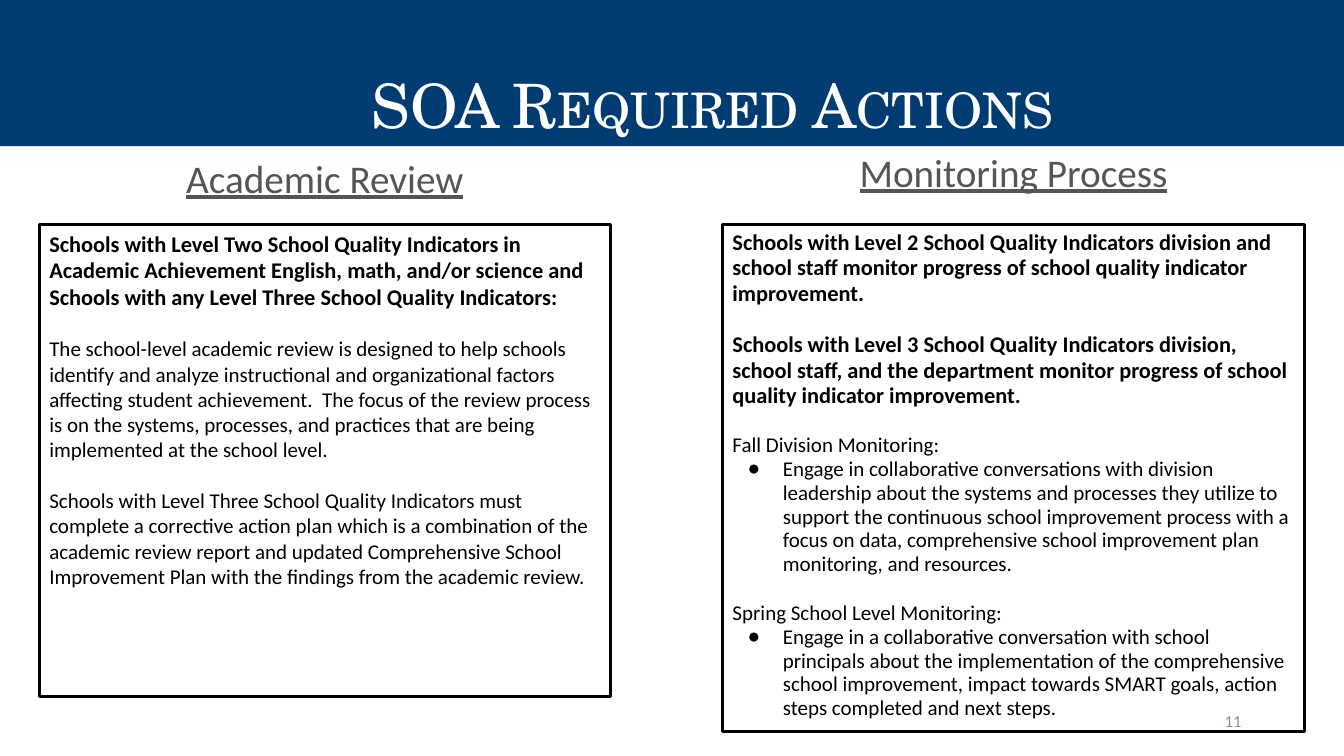
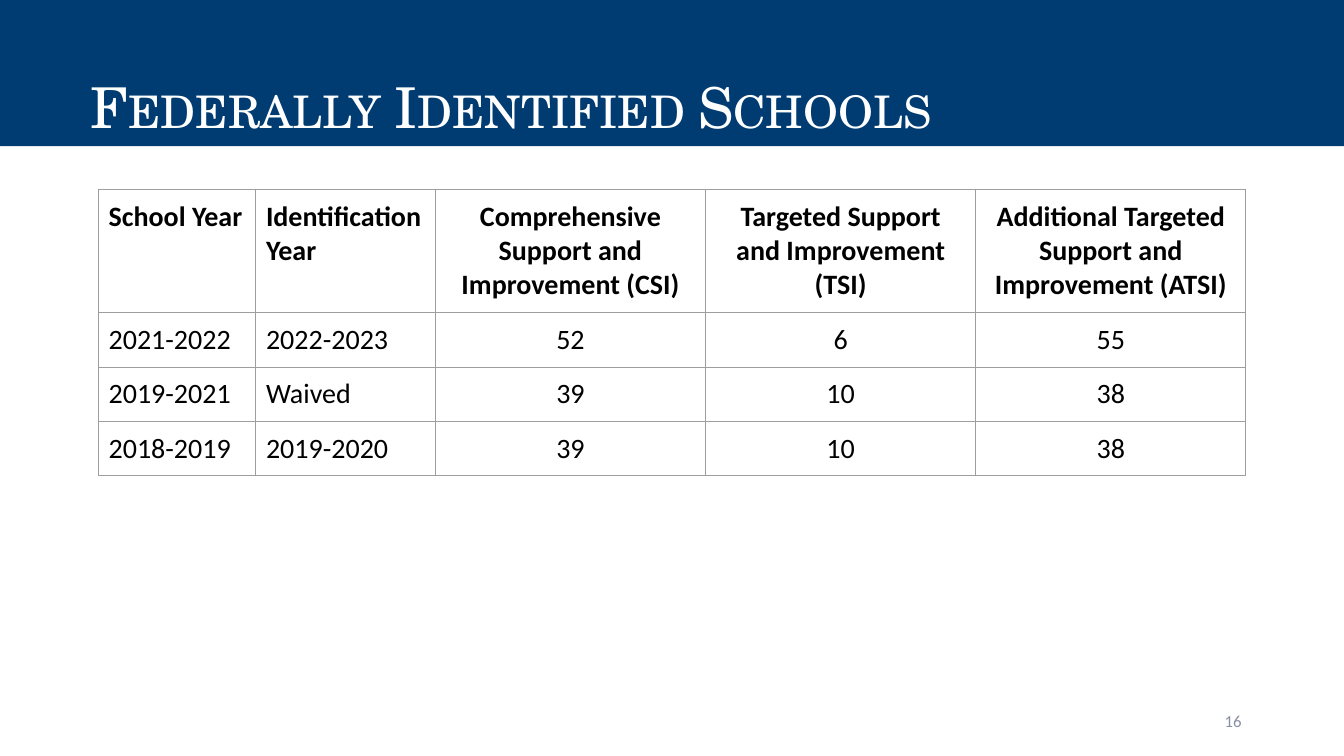
import pptx
import pptx.util
import pptx.dml.color
import pptx.enum.text
import pptx.oxml
import pptx.oxml.ns
import lxml.etree

Pt = pptx.util.Pt
RGB = pptx.dml.color.RGBColor
ALIGN = pptx.enum.text.PP_ALIGN
ANCHOR = pptx.enum.text.MSO_ANCHOR
qn = pptx.oxml.ns.qn

# Colours and fonts
NAVY = RGB(0x00, 0x3C, 0x71)
WHITE = RGB(0xFF, 0xFF, 0xFF)
BLACK = RGB(0x00, 0x00, 0x00)
HEADING_GRAY = RGB(0x55, 0x55, 0x55)
NUMBER_GRAY = RGB(0x88, 0x8F, 0xA3)
GRID_GRAY = RGB(0x9E, 0x9E, 0x9E)
SERIF = "TeX Gyre Schola"
SANS = "Calibri"

# Text formats
TITLE = dict(name=SERIF, color=WHITE, bold=False)
HEADING = dict(name=SANS, size=Pt(28), color=HEADING_GRAY, bold=False, underline=True)
NUMBER = dict(name=SANS, size=Pt(12), color=NUMBER_GRAY)
LEAD = dict(name=SANS, size=Pt(16), color=BLACK, bold=True)
TEXT = dict(LEAD, size=Pt(15), bold=False)
HEAD_CELL = dict(LEAD, size=Pt(20))
CELL = dict(HEAD_CELL, bold=False)

SLIDE_W, SLIDE_H = 960, 540
BAND_H = 104.4
COMPARISON, TITLE_ONLY = 4, 5


class Deck:
    """Holds the shared style and the current slide."""

    def __init__(self):
        self.prs = pptx.Presentation()
        self.prs.slide_width, self.prs.slide_height = Pt(SLIDE_W), Pt(SLIDE_H)
        self.slide = None

    def new_slide(self, layout, title, size, number, align=ALIGN.LEFT, spacing=1.0):
        self.slide = self.prs.slides.add_slide(self.prs.slide_layouts[layout])
        # Title band
        sp = self.slide.shapes.title
        self.place(sp, (0, 0, SLIDE_W, BAND_H), ANCHOR.BOTTOM)
        sp.text_frame.margin_left = Pt(64.8)
        sp.fill.solid()
        sp.fill.fore_color.rgb = NAVY
        r = self.add_text(sp.text_frame.paragraphs[0], title, dict(TITLE, size=Pt(size)),
                          alignment=align, line_spacing=spacing)
        r._r.get_or_add_rPr().set("cap", "small")
        # Slide number
        sp = self.slide.shapes.add_textbox(0, 0, 0, 0)
        self.place(sp, (678, 500.4, 216, 28.8), ANCHOR.MIDDLE)
        self.add_text(sp.text_frame.paragraphs[0], number, NUMBER, alignment=ALIGN.RIGHT)

    def place(self, sp, box, anchor):
        for name, value in zip(("left", "top", "width", "height"), box):
            setattr(sp, name, Pt(value))
        tf = sp.text_frame
        tf.word_wrap = True
        tf.auto_size = pptx.enum.text.MSO_AUTO_SIZE.NONE
        tf.vertical_anchor = anchor

    def add_text(self, p, text, font, **layout):
        for name, value in layout.items():
            setattr(p, name, value)
        r = p.add_run()
        r.text = text
        for name, value in font.items():
            if name == "color":
                r.font.color.rgb = value
            else:
                setattr(r.font, name, value)
        return r

    def bullet(self, p, char=None):
        pPr = p._p.get_or_add_pPr()
        left, indent = (36, -25.2) if char else (0, 0)
        pPr.set("marL", str(Pt(left)))
        pPr.set("indent", str(Pt(indent)))
        if char:
            clr = lxml.etree.SubElement(pPr, qn("a:buClr"))
            lxml.etree.SubElement(clr, qn("a:srgbClr"), val=str(BLACK))
            lxml.etree.SubElement(pPr, qn("a:buChar"), char=char)
        else:
            lxml.etree.SubElement(pPr, qn("a:buNone"))

    def heading(self, idx, box, text):
        sp = self.slide.placeholders[idx]
        self.place(sp, box, ANCHOR.TOP)
        p = sp.text_frame.paragraphs[0]
        self.add_text(p, text, HEADING, alignment=ALIGN.CENTER,
                      line_spacing=0.8, space_before=Pt(10))
        self.bullet(p)

    def panel(self, idx, box, items, spacing):
        """Outlined list; each item is (text, font, space before, bullet)."""
        sp = self.slide.placeholders[idx]
        self.place(sp, box, ANCHOR.TOP)
        sp.line.color.rgb = BLACK
        sp.line.width = Pt(2.25)
        tf = sp.text_frame
        for i, (text, font, before, char) in enumerate(items):
            p = tf.add_paragraph() if i else tf.paragraphs[0]
            self.add_text(p, text, font, alignment=ALIGN.LEFT,
                          line_spacing=spacing, space_before=Pt(before))
            self.bullet(p, char)

    def table(self, left, top, widths, heights, rows):
        shape = self.slide.shapes.add_table(len(rows), len(widths), Pt(left), Pt(top),
                                            Pt(sum(widths)), Pt(sum(heights)))
        tbl = shape.table
        tbl.first_row = tbl.horz_banding = False
        for col, width in zip(tbl.columns, widths):
            col.width = Pt(width)
        for i, (row, height) in enumerate(zip(rows, heights)):
            tbl.rows[i].height = Pt(height)
            for j, text in enumerate(row):
                self.cell(tbl.cell(i, j), text, CELL if i else HEAD_CELL,
                          ALIGN.LEFT if j < 2 else ALIGN.CENTER)

    def cell(self, cell, text, font, align):
        for side in ("left", "top", "right", "bottom"):
            setattr(cell, "margin_" + side, Pt(7.2))
        self.add_text(cell.text_frame.paragraphs[0], text, font, alignment=align)
        # Borders come before the fill in the cell properties
        tcPr = cell._tc.get_or_add_tcPr()
        for tag in ("a:lnL", "a:lnR", "a:lnT", "a:lnB"):
            ln = lxml.etree.SubElement(tcPr, qn(tag), w=str(Pt(0.75)))
            fill = lxml.etree.SubElement(ln, qn("a:solidFill"))
            lxml.etree.SubElement(fill, qn("a:srgbClr"), val=str(GRID_GRAY))
        cell.fill.background()


def main():
    deck = Deck()

    # Required actions: two headed panels
    deck.new_slide(COMPARISON, "SOA Required Actions", 43.7, "11", ALIGN.CENTER)
    deck.heading(1, (28, 113, 408, 47.5), "Academic Review")
    deck.panel(2, (28, 160.5, 408, 337), [
        ("Schools with Level Two School Quality Indicators in Academic Achievement "
         "English, math, and/or science and Schools with any Level Three School "
         "Quality Indicators:", LEAD, 0, None),
        ("The school-level academic review is designed to help schools identify and "
         "analyze instructional and organizational factors affecting student "
         "achievement.  The focus of the review process is on the systems, processes, "
         "and practices that are being implemented at the school level.",
         TEXT, 18.3, None),
        ("Schools with Level Three School Quality Indicators must complete a "
         "corrective action plan which is a combination of the academic review report "
         "and updated Comprehensive School Improvement Plan with the findings from "
         "the academic review.", TEXT, 18.3, None),
    ], 1.0)
    deck.heading(3, (521, 108.7, 406, 47.5), "Monitoring Process")
    deck.panel(4, (516, 160.5, 416, 362), [
        ("Schools with Level 2 School Quality Indicators division and school staff "
         "monitor progress of school quality indicator improvement.", LEAD, 0, None),
        ("Schools with Level 3 School Quality Indicators division, school staff, and "
         "the department monitor progress of school quality indicator improvement.",
         LEAD, 18.5, None),
        ("Fall Division Monitoring:", TEXT, 17.4, None),
        ("Engage in collaborative conversations with division leadership about the "
         "systems and processes they utilize to support the continuous school "
         "improvement process with a focus on data, comprehensive school improvement "
         "plan monitoring, and resources.", TEXT, 0, "●"),
        ("Spring School Level Monitoring:", TEXT, 17.4, None),
        ("Engage in a collaborative conversation with school principals about the "
         "implementation of the comprehensive school improvement, impact towards "
         "SMART goals, action steps completed and next steps.", TEXT, 0, "●"),
    ], 0.95)

    # Identified schools: table by year
    deck.new_slide(TITLE_ONLY, "Federally Identified Schools", 40.2, "16", spacing=0.9)
    deck.table(70.4, 135.3, [112.4, 128.2] + [193] * 3, [87.8] + [38.8] * 3, [
        ("School Year", "Identification Year",
         "Comprehensive Support and Improvement (CSI)",
         "Targeted Support and Improvement (TSI)",
         "Additional Targeted Support and Improvement (ATSI)"),
        ("2021-2022", "2022-2023", "52", "6", "55"),
        ("2019-2021", "Waived", "39", "10", "38"),
        ("2018-2019", "2019-2020", "39", "10", "38"),
    ])

    deck.prs.save("out.pptx")


if __name__ == "__main__":
    main()
